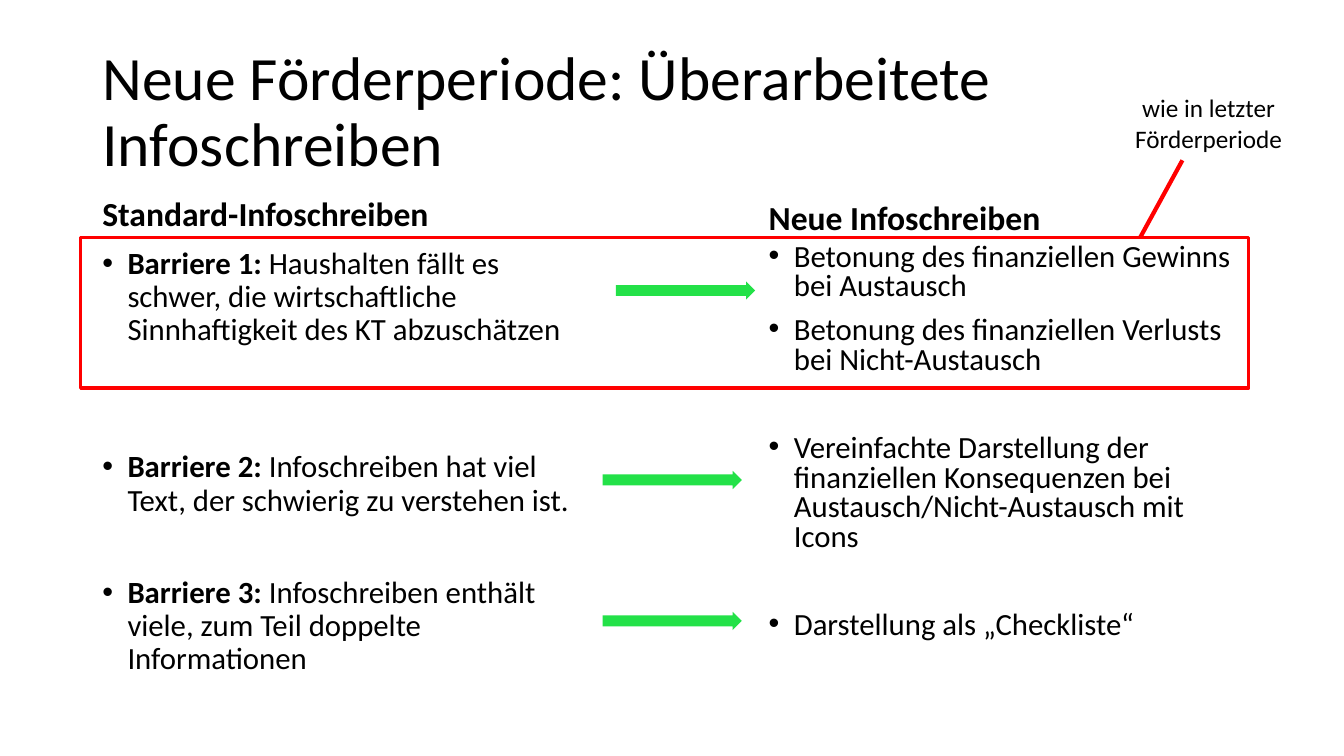
from lxml import etree
from pptx import Presentation
from pptx.dml.color import RGBColor
from pptx.enum import shapes, text
from pptx.oxml import ns
from pptx.util import Pt

BLACK = RGBColor(0x00, 0x00, 0x00)
RED = RGBColor(0xFF, 0x00, 0x00)
GREEN = RGBColor(0x23, 0xE1, 0x48)
TOP, MIDDLE, BOTTOM = text.MSO_ANCHOR.TOP, text.MSO_ANCHOR.MIDDLE, text.MSO_ANCHOR.BOTTOM
LEFT, CENTER = text.PP_ALIGN.LEFT, text.PP_ALIGN.CENTER


def write_paragraph(paragraph, runs, size, line_spacing, space_before=0, alignment=LEFT):
    paragraph_format = {
        "line_spacing": line_spacing,
        "space_before": Pt(space_before),
        "alignment": alignment,
    }
    for name, value in paragraph_format.items():
        setattr(paragraph, name, value)
    for words, bold in runs:
        run = paragraph.add_run()
        run.text = words
        font_format = {"name": "Calibri", "size": Pt(size), "bold": bold}
        for name, value in font_format.items():
            setattr(run.font, name, value)
        run.font.color.rgb = BLACK


def prepare_frame(shape, anchor):
    frame_format = {
        "word_wrap": True,
        "auto_size": text.MSO_AUTO_SIZE.NONE,
        "vertical_anchor": anchor,
    }
    for name, value in frame_format.items():
        setattr(shape.text_frame, name, value)
    return shape.text_frame


presentation = Presentation()
presentation.slide_width, presentation.slide_height = Pt(960), Pt(540)
slide = presentation.slides.add_slide(presentation.slide_layouts[5])

title = slide.shapes.title
title_place = {"left": 66, "top": 28.8, "width": 828, "height": 104.4}
for name, value in title_place.items():
    setattr(title, name, Pt(value))
title_frame = prepare_frame(title, MIDDLE)
title_words = "Neue Förderperiode: Überarbeitete Infoschreiben"
write_paragraph(title_frame.paragraphs[0], [(title_words, False)], 44, 0.9)

labels = [
    ("Standard-Infoschreiben", (66, 132.5, 406, 38), 24, True, 0.9, BOTTOM, LEFT),
    ("Neue Infoschreiben", (542, 132.5, 352, 41), 24, True, 0.9, BOTTOM, LEFT),
    ("wie in letzter Förderperiode", (795.6, 62.6, 135.4, 51), 18, False, 1.0, TOP, CENTER),
]
for words, place, size, bold, line_spacing, anchor, alignment in labels:
    label = slide.shapes.add_textbox(*map(Pt, place))
    frame = prepare_frame(label, anchor)
    write_paragraph(frame.paragraphs[0], [(words, bold)], size, line_spacing, alignment=alignment)

barriers = [
    (0, [("Barriere 1: ", True),
         ("Haushalten fällt es schwer, die wirtschaftliche Sinnhaftigkeit des KT abzuschätzen", False)]),
    (74, [("Barriere 2:", True),
          (" Infoschreiben hat viel Text, der schwierig zu verstehen ist.", False)]),
    (42, [("Barriere 3: ", True),
          ("Infoschreiben enthält viele, zum Teil doppelte Informationen", False)]),
]
answers = [
    (0, [("Betonung des finanziellen Gewinns bei Austausch", False)]),
    (10, [("Betonung des finanziellen Verlusts bei Nicht-Austausch", False)]),
    (42, [("Vereinfachte Darstellung der finanziellen Konsequenzen bei "
           "Austausch/Nicht-Austausch mit Icons", False)]),
    (42, [("Darstellung als „Checkliste“", False)]),
]
columns = [
    (barriers, (66, 173.5, 353.5, 314), 0.9),
    (answers, (542, 170.6, 352, 310), 0.8),
]
for points, place, line_spacing in columns:
    column = slide.shapes.add_textbox(*map(Pt, place))
    frame = prepare_frame(column, TOP)
    for index, (space_before, runs) in enumerate(points):
        paragraph = frame.add_paragraph() if index else frame.paragraphs[0]
        write_paragraph(paragraph, runs, 22, line_spacing, space_before)
        properties = paragraph._p.get_or_add_pPr()
        properties.set("marL", str(Pt(18)))
        properties.set("indent", str(-Pt(18)))
        etree.SubElement(properties, ns.qn("a:buFont")).set("typeface", "Arial")
        etree.SubElement(properties, ns.qn("a:buChar")).set("char", "•")

for left, top in [(440, 201), (430.5, 336.3), (430.5, 437)]:
    arrow = slide.shapes.add_shape(
        shapes.MSO_SHAPE.RIGHT_ARROW, Pt(left), Pt(top), Pt(99.4), Pt(13))
    arrow.adjustments[0] = 0.6
    arrow.shadow.inherit = False
    arrow.fill.solid()
    arrow.fill.fore_color.rgb = GREEN
    arrow.line.fill.background()

highlight = slide.shapes.add_shape(
    shapes.MSO_SHAPE.RECTANGLE, Pt(57.6), Pt(169.9), Pt(834.5), Pt(107.3))
highlight.shadow.inherit = False
highlight.fill.background()
pointer = slide.shapes.add_connector(
    shapes.MSO_CONNECTOR.STRAIGHT, Pt(844.6), Pt(114.5), Pt(814.3), Pt(169.9))
etree.SubElement(pointer._element.spPr, ns.qn("a:effectLst"))
for shape, width in [(highlight, 2.25), (pointer, 3)]:
    shape.line.color.rgb = RED
    shape.line.width = Pt(width)

presentation.save("out.pptx")
